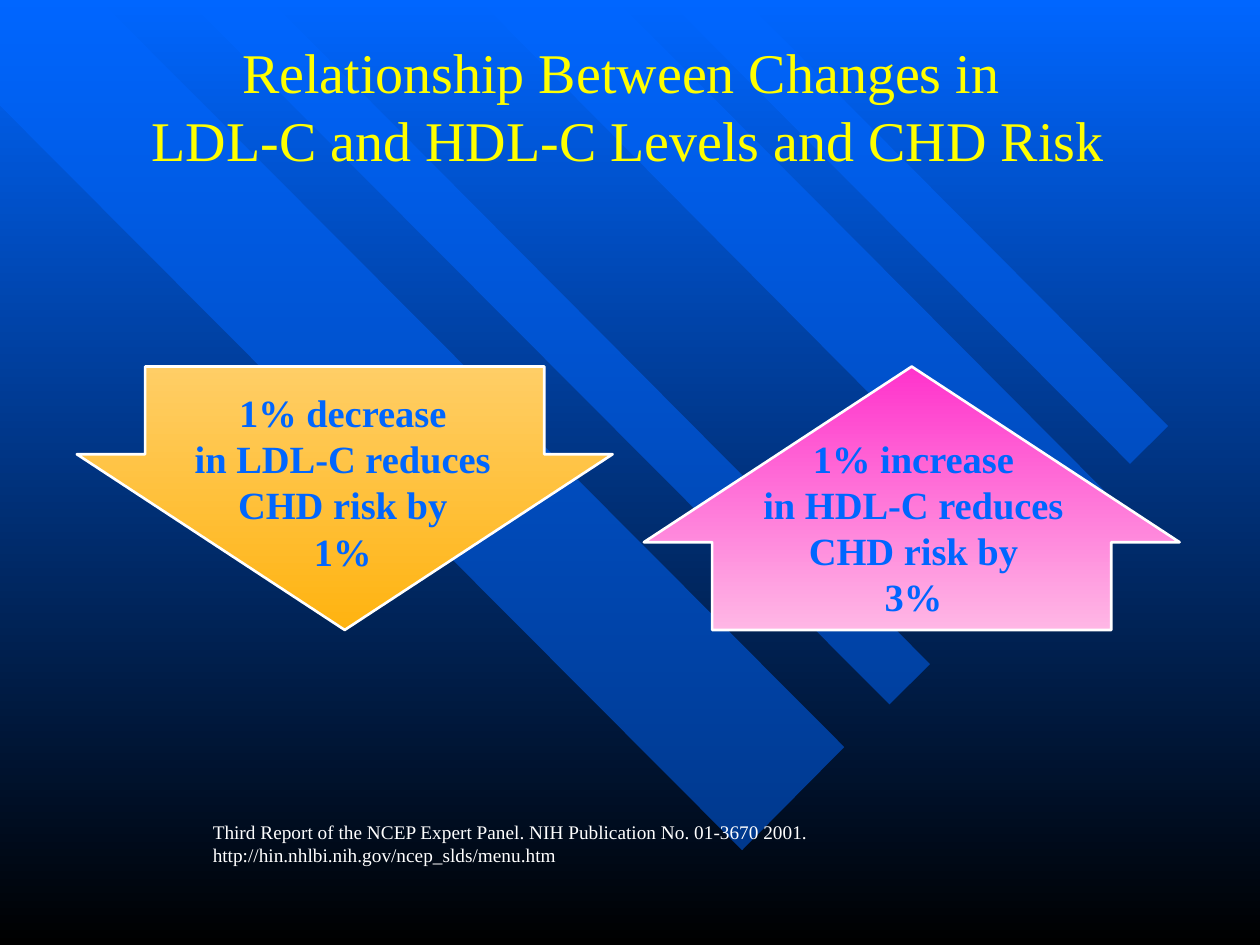
from lxml.etree import SubElement
from pptx import Presentation
from pptx.dml.color import RGBColor
from pptx.enum.shapes import MSO_SHAPE
from pptx.enum.text import MSO_ANCHOR, MSO_AUTO_SIZE, PP_ALIGN
from pptx.oxml.ns import qn
from pptx.util import Cm, Pt

BLUE = RGBColor(0x00, 0x66, 0xFF)
BLACK = RGBColor(0x00, 0x00, 0x00)
WHITE = RGBColor(0xFF, 0xFF, 0xFF)
YELLOW = RGBColor(0xFF, 0xFF, 0x00)
LIGHT_ORANGE = RGBColor(0xFF, 0xCE, 0x66)
ORANGE = RGBColor(0xFF, 0xB3, 0x10)
MAGENTA = RGBColor(0xFF, 0x33, 0xCC)
PINK = RGBColor(0xFF, 0xB7, 0xE5)

FONT_NAME = "Times New Roman"
TITLE_FONT = {"name": FONT_NAME, "size": Pt(32), "color": YELLOW}
EFFECT_FONT = {"name": FONT_NAME, "size": Pt(22), "bold": True, "color": BLUE}
CITATION_FONT = {"name": FONT_NAME, "size": Pt(11), "color": WHITE}

BANDS = [
    [(17.02, 15.06), (2.01, 0), (0, 0), (0, 2.13), (14.96, 17.14)],
    [(5.44, 0), (18.75, 13.39), (17.93, 14.2), (3.78, 0)],
    [(12.42, 0), (22.25, 9.88), (20.85, 11.28), (9.65, 0)],
    [(13.46, 0), (22.78, 9.35), (23.55, 8.59), (15.01, 0)],
]


def apply_gradient(fill, top_color, bottom_color):
    """Fill from one colour at the top to another at the bottom."""
    fill.gradient()
    fill.gradient_angle = 270
    for stop, position, color in zip(fill.gradient_stops, (0, 1), (top_color, bottom_color)):
        stop.position = position
        stop.color.rgb = color


def add_band(slide, points):
    """Add a half-transparent diagonal band through points given in centimetres."""
    corners = [(Cm(x), Cm(y)) for x, y in points]
    builder = slide.shapes.build_freeform(*corners[0])
    builder.add_line_segments(corners[1:])
    band = builder.convert_to_shape()
    band.shadow.inherit = False
    band.line.fill.background()
    band.fill.solid()
    band.fill.fore_color.rgb = BLUE
    color = band.fill._xPr.find(qn("a:solidFill"))[0]
    SubElement(color, qn("a:alpha"), val="50000")


def write_text(shape, text, font_values, frame_values, alignment):
    """Write one paragraph and format its frame and font."""
    frame = shape.text_frame
    frame.text = text
    frame.word_wrap = True
    frame.auto_size = MSO_AUTO_SIZE.NONE
    for name, value in frame_values.items():
        setattr(frame, name, value)
    paragraph = frame.paragraphs[0]
    paragraph.alignment = alignment
    paragraph.space_before = Pt(0)
    for run in paragraph.runs:
        for name, value in font_values.items():
            if name == "color":
                run.font.color.rgb = value
            else:
                setattr(run.font, name, value)


def place_title(slide, text):
    """Move the title placeholder in front of the bands and fill it."""
    title = slide.shapes.title
    slide.shapes.element.append(title.element)
    title.left, title.top, title.width, title.height = Cm(1.02), Cm(0.53), Cm(23.29), Cm(3.18)
    write_text(title, text, TITLE_FONT, {"vertical_anchor": MSO_ANCHOR.MIDDLE}, PP_ALIGN.CENTER)


def add_text(slide, bounds, text, font_values, frame_values, alignment):
    """Add a wrapping text box with bounds in centimetres."""
    box = slide.shapes.add_textbox(*map(Cm, bounds))
    write_text(box, text, font_values, frame_values, alignment)


def add_arrow(slide, preset, left, colors):
    """Add a wide block arrow with a gradient and a white outline."""
    arrow = slide.shapes.add_shape(preset, Cm(left), Cm(7.39), Cm(10.8), Cm(5.31))
    arrow.adjustments[0] = 0.745
    arrow.adjustments[1] = 0.667
    arrow.shadow.inherit = False
    apply_gradient(arrow.fill, *colors)
    arrow.line.color.rgb = WHITE
    arrow.line.width = Pt(1.5)


def main():
    """Build and save the slide."""
    presentation = Presentation()
    presentation.slide_width, presentation.slide_height = Cm(25.4), Cm(19.05)
    slide = presentation.slides.add_slide(presentation.slide_layouts[5])
    apply_gradient(slide.background.fill, BLUE, BLACK)
    for points in BANDS:
        add_band(slide, points)
    place_title(slide, "Relationship Between Changes in \vLDL-C and HDL-C Levels and CHD Risk")
    add_text(
        slide, (3.78, 16.41, 16.41, 1.57),
        "Third Report of the NCEP Expert Panel. NIH Publication No. 01-3670 2001. "
        "http://hin.nhlbi.nih.gov/ncep_slds/menu.htm",
        CITATION_FONT,
        {"vertical_anchor": MSO_ANCHOR.BOTTOM, "margin_left": Cm(0.51), "margin_bottom": Cm(0.51)},
        PP_ALIGN.LEFT,
    )
    effects = [
        (MSO_SHAPE.DOWN_ARROW, 1.55, (LIGHT_ORANGE, ORANGE), (3.25, 7.72, 7.32, 3.99),
         "1% decrease\vin LDL-C reduces CHD risk by\v1%"),
        (MSO_SHAPE.UP_ARROW, 12.98, (MAGENTA, PINK), (14.48, 8.64, 7.87, 3.96),
         "1% increase\vin HDL-C reduces CHD risk by\v3%"),
    ]
    for preset, left, colors, bounds, text in effects:
        add_arrow(slide, preset, left, colors)
        add_text(slide, bounds, text, EFFECT_FONT, {}, PP_ALIGN.CENTER)
    presentation.save("out.pptx")


if __name__ == "__main__":
    main()
